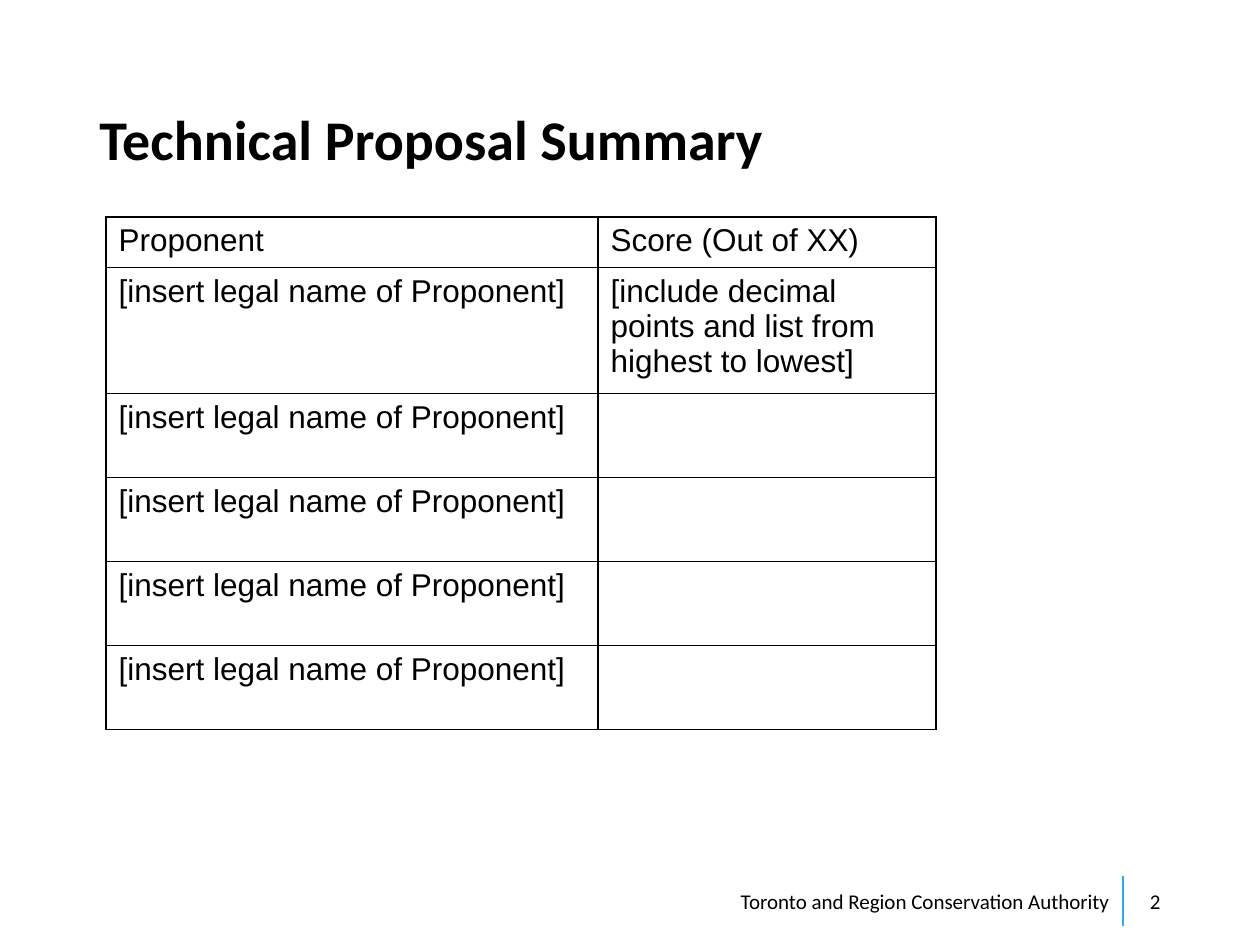
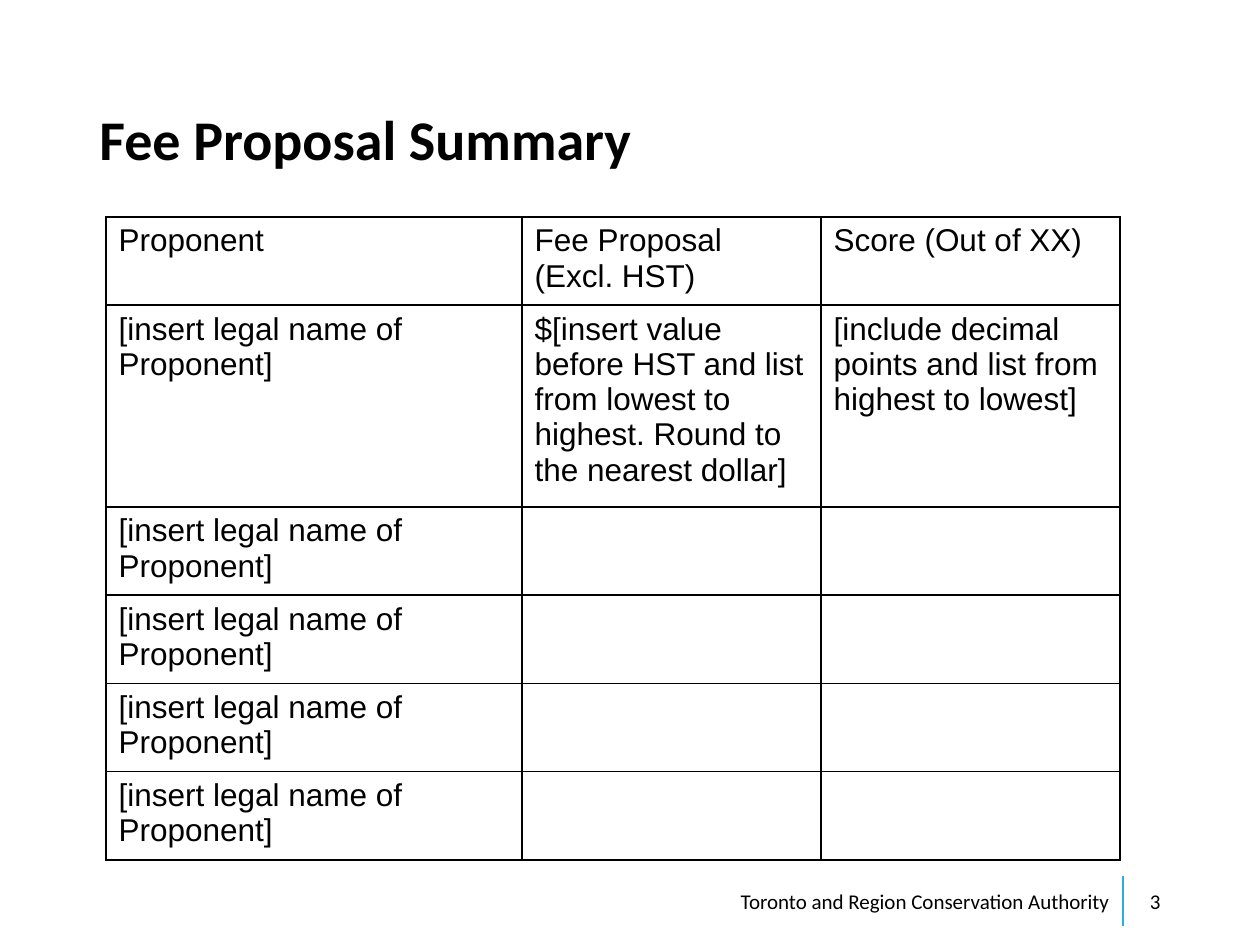
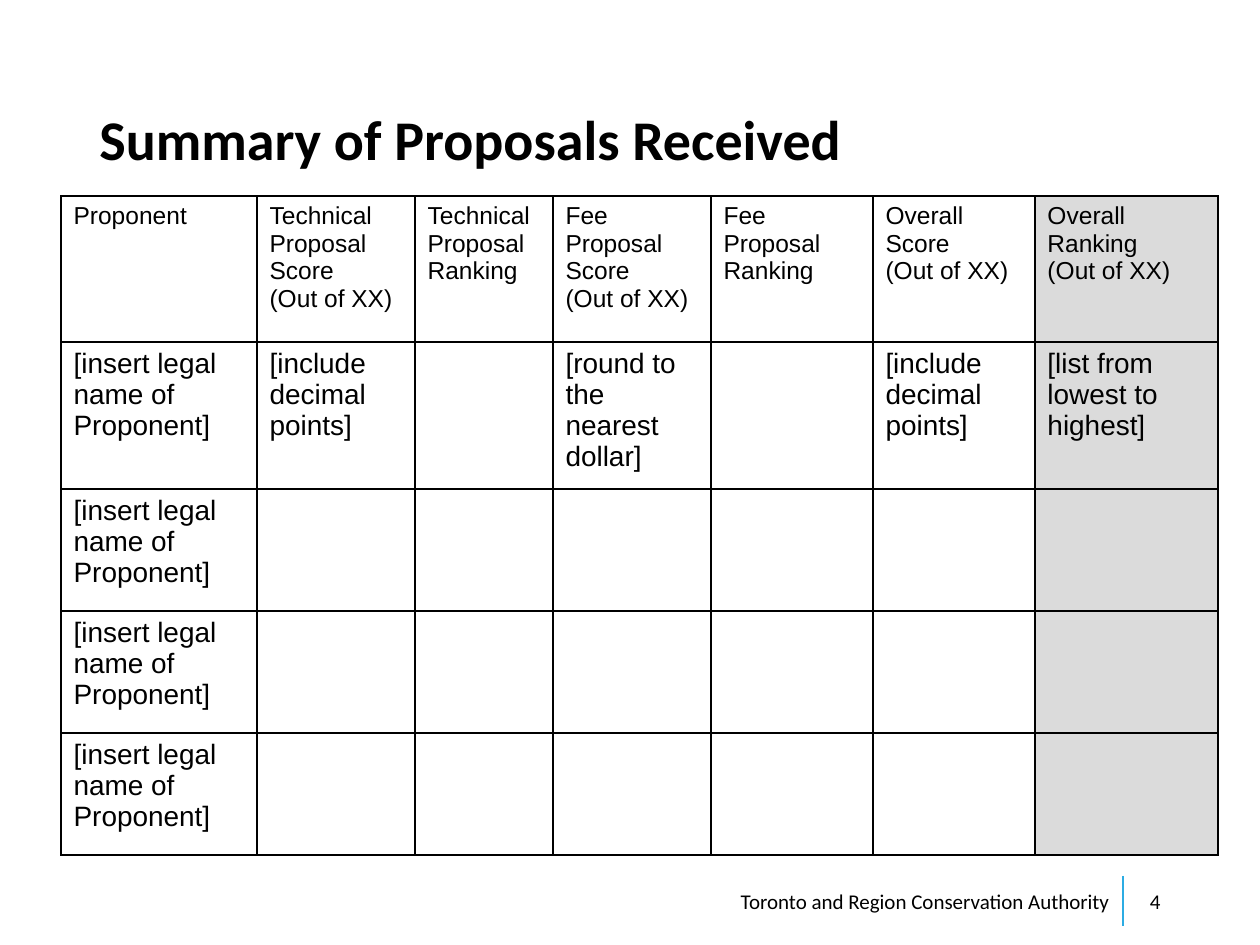
"""Build three proposal evaluation summary slides with python-pptx."""
from lxml.etree import SubElement
from pptx import Presentation
from pptx.dml.color import RGBColor
from pptx.enum.shapes import MSO_CONNECTOR
from pptx.enum.text import MSO_ANCHOR, PP_ALIGN
from pptx.oxml.ns import qn
from pptx.util import Emu, Pt

EMU_PER_PX = 914400 / 126
BLACK = "000000"
FOOTER_BLUE = "2CACE3"
RANKING_GREY = "DBDBDB"
AUTHORITY = "Toronto and Region Conservation Authority"
PROPONENT = "[insert legal name of Proponent]"
SCORE = "Score (Out of XX)"
SCORE_HINT = "[include decimal points and list from highest to lowest]"
DECIMAL_HINT = "[include decimal points]"

SUMMARIES = [
    {
        "title": "Technical Proposal Summary",
        "corner": (106, 217),
        "columns": [492, 338],
        "rows": [48, 119, 84, 84, 84, 84],
        "sizes": (18, 18),
        "cells": [["Proponent", SCORE], [PROPONENT, SCORE_HINT]],
        "shaded_column": None,
    },
    {
        "title": "Fee Proposal Summary",
        "corner": (106, 217),
        "columns": [416, 299, 299],
        "rows": [84, 189, 84, 84, 84, 84],
        "sizes": (18, 18),
        "cells": [
            ["Proponent", "Fee Proposal (Excl. HST)", SCORE],
            [
                PROPONENT,
                "$[insert value before HST and list from lowest to highest. "
                "Round to the nearest dollar]",
                SCORE_HINT,
            ],
        ],
        "shaded_column": None,
    },
    {
        "title": "Summary of Proposals Received",
        "corner": (61, 196),
        "columns": [196, 158, 138, 158, 162, 162, 183],
        "rows": [146, 137, 122, 122, 122],
        "sizes": (14, 16),
        "cells": [
            [
                "Proponent",
                "Technical Proposal Score\n(Out of XX)",
                "Technical Proposal Ranking",
                "Fee Proposal Score\n(Out of XX)",
                "Fee Proposal Ranking",
                "Overall Score\n(Out of XX)",
                "Overall Ranking\n(Out of XX)",
            ],
            [
                PROPONENT,
                DECIMAL_HINT,
                "",
                "[round to the nearest dollar]",
                "",
                DECIMAL_HINT,
                "[list from lowest to highest]",
            ],
        ],
        "shaded_column": 6,
    },
]


def px(*lengths):
    return [Emu(round(length * EMU_PER_PX)) for length in lengths]


def write_text(frame, text, size, font="Calibri", bold=False,
               align=PP_ALIGN.LEFT, anchor=MSO_ANCHOR.MIDDLE, spacing=1.0):
    frame.word_wrap = True
    frame.vertical_anchor = anchor
    frame.text = text
    for paragraph in frame.paragraphs:
        paragraph.alignment = align
        paragraph.line_spacing = spacing
        paragraph.font.name = font
        paragraph.font.size = Pt(size)
        paragraph.font.bold = bold
        paragraph.font.color.rgb = RGBColor.from_string(BLACK)


presentation = Presentation()
presentation.slide_width, presentation.slide_height = px(1260, 945)

for page, summary in enumerate(SUMMARIES, start=2):
    slide = presentation.slides.add_slide(presentation.slide_layouts[6])

    divider = slide.shapes.add_connector(
        MSO_CONNECTOR.STRAIGHT, *px(1123, 876, 1123, 926))
    divider.line.color.rgb = RGBColor.from_string(FOOTER_BLUE)
    divider.line.width = Pt(1.25)
    SubElement(divider.element.spPr, qn("a:effectLst"))

    title = slide.shapes.add_textbox(*px(87, 72, 1086, 141))
    write_text(title.text_frame, summary["title"], 32, bold=True, spacing=0.9)
    footer = slide.shapes.add_textbox(*px(689, 876, 433, 50))
    write_text(footer.text_frame, AUTHORITY, 12, align=PP_ALIGN.RIGHT)
    number = slide.shapes.add_textbox(*px(1123, 876, 50, 50))
    write_text(number.text_frame, str(page), 12, align=PP_ALIGN.RIGHT)

    columns, rows = summary["columns"], summary["rows"]
    table = slide.shapes.add_table(
        len(rows), len(columns),
        *px(*summary["corner"], sum(columns), sum(rows))).table
    table.first_row = table.horz_banding = False
    for column, width in zip(table.columns, px(*columns)):
        column.width = width
    for row, height in zip(table.rows, px(*rows)):
        row.height = height

    blank_row = [PROPONENT] + [""] * (len(columns) - 1)
    contents = summary["cells"] + [blank_row] * (len(rows) - 2)
    header_size, body_size = summary["sizes"]
    for row_index, texts in enumerate(contents):
        for column_index, text in enumerate(texts):
            cell = table.cell(row_index, column_index)
            properties = cell._tc.get_or_add_tcPr()
            for side in ("a:lnL", "a:lnR", "a:lnT", "a:lnB"):
                border = SubElement(properties, qn(side), w=str(Pt(1)))
                fill = SubElement(border, qn("a:solidFill"))
                SubElement(fill, qn("a:srgbClr"), val=BLACK)
            if column_index == summary["shaded_column"]:
                cell.fill.solid()
                cell.fill.fore_color.rgb = RGBColor.from_string(RANKING_GREY)
            else:
                cell.fill.background()
            write_text(cell.text_frame, text,
                       body_size if row_index else header_size,
                       font="Arial", anchor=MSO_ANCHOR.TOP)

presentation.save("out.pptx")
